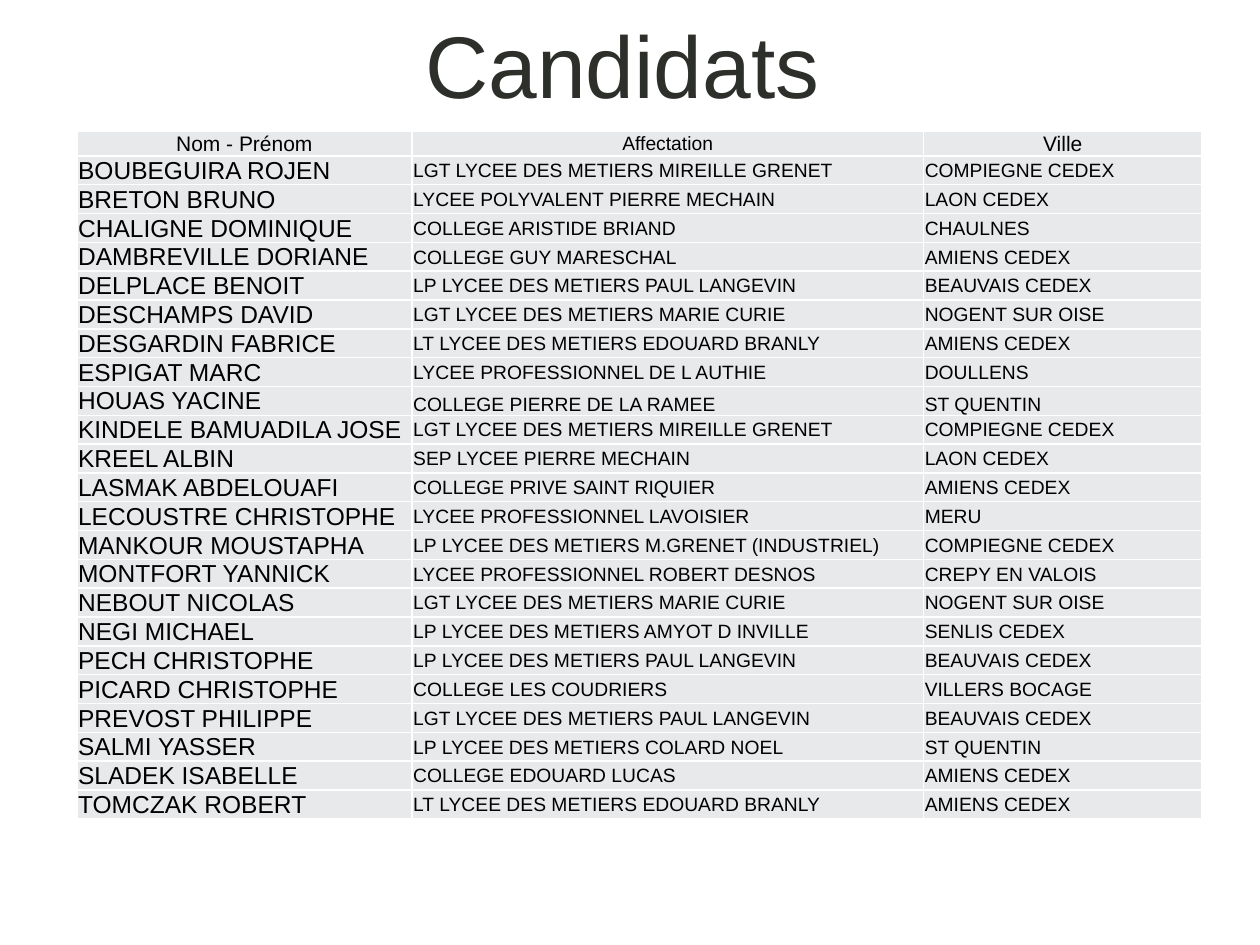
"""Build the "Candidats" slide: a title above a table of names, schools and towns."""
from lxml.etree import SubElement
from pptx import Presentation
from pptx.dml.color import RGBColor
from pptx.enum.text import MSO_ANCHOR as Anchor, PP_ALIGN as Align
from pptx.oxml.ns import qn
from pptx.util import Inches, Pt

HEADINGS = ("Nom - Prénom", "Affectation", "Ville")
CANDIDATES = [
    ("BOUBEGUIRA ROJEN", "LGT LYCEE DES METIERS MIREILLE GRENET", "COMPIEGNE CEDEX"),
    ("BRETON BRUNO", "LYCEE POLYVALENT PIERRE MECHAIN", "LAON CEDEX"),
    ("CHALIGNE DOMINIQUE", "COLLEGE ARISTIDE BRIAND", "CHAULNES"),
    ("DAMBREVILLE DORIANE", "COLLEGE GUY MARESCHAL", "AMIENS CEDEX"),
    ("DELPLACE BENOIT", "LP LYCEE DES METIERS PAUL LANGEVIN", "BEAUVAIS CEDEX"),
    ("DESCHAMPS DAVID", "LGT LYCEE DES METIERS MARIE CURIE", "NOGENT SUR OISE"),
    ("DESGARDIN FABRICE", "LT LYCEE DES METIERS EDOUARD BRANLY", "AMIENS CEDEX"),
    ("ESPIGAT MARC", "LYCEE PROFESSIONNEL DE L AUTHIE", "DOULLENS"),
    ("HOUAS YACINE", "COLLEGE PIERRE DE LA RAMEE", "ST QUENTIN"),
    ("KINDELE BAMUADILA JOSE", "LGT LYCEE DES METIERS MIREILLE GRENET", "COMPIEGNE CEDEX"),
    ("KREEL ALBIN", "SEP LYCEE PIERRE MECHAIN", "LAON CEDEX"),
    ("LASMAK ABDELOUAFI", "COLLEGE PRIVE SAINT RIQUIER", "AMIENS CEDEX"),
    ("LECOUSTRE CHRISTOPHE", "LYCEE PROFESSIONNEL LAVOISIER", "MERU"),
    ("MANKOUR MOUSTAPHA", "LP LYCEE DES METIERS M.GRENET (INDUSTRIEL)", "COMPIEGNE CEDEX"),
    ("MONTFORT YANNICK", "LYCEE PROFESSIONNEL ROBERT DESNOS", "CREPY EN VALOIS"),
    ("NEBOUT NICOLAS", "LGT LYCEE DES METIERS MARIE CURIE", "NOGENT SUR OISE"),
    ("NEGI MICHAEL", "LP LYCEE DES METIERS AMYOT D INVILLE", "SENLIS CEDEX"),
    ("PECH CHRISTOPHE", "LP LYCEE DES METIERS PAUL LANGEVIN", "BEAUVAIS CEDEX"),
    ("PICARD CHRISTOPHE", "COLLEGE LES COUDRIERS", "VILLERS BOCAGE"),
    ("PREVOST PHILIPPE", "LGT LYCEE DES METIERS PAUL LANGEVIN", "BEAUVAIS CEDEX"),
    ("SALMI YASSER", "LP LYCEE DES METIERS COLARD NOEL", "ST QUENTIN"),
    ("SLADEK ISABELLE", "COLLEGE EDOUARD LUCAS", "AMIENS CEDEX"),
    ("TOMCZAK ROBERT", "LT LYCEE DES METIERS EDOUARD BRANLY", "AMIENS CEDEX"),
]
COLUMN_WIDTHS = (2.66, 4.06, 2.21)
HEADING_SIZES = (12, 11, 12)
CANDIDATE_SIZES = (14, 11, 11)


def style_font(font, size, color):
    font.name, font.size, font.bold = "Arial", Pt(size), False
    font.color.rgb = RGBColor.from_string(color)


def add_borders(cell, color, width):
    for side in ("lnL", "lnR", "lnT", "lnB"):
        line = SubElement(cell._tc.get_or_add_tcPr(), qn(f"a:{side}"), w=str(Pt(width)))
        SubElement(SubElement(line, qn("a:solidFill")), qn("a:srgbClr"), val=color)


prs = Presentation()
prs.slide_width, prs.slide_height = Inches(10), Inches(7.5)
slide = prs.slides.add_slide(prs.slide_layouts[5])

heading = slide.shapes.title
heading.left, heading.top = Inches(0.75), Inches(0.07)
heading.width, heading.height = Inches(8.38), Inches(0.87)
heading.text_frame.text = "Candidats"
heading.text_frame.vertical_anchor = Anchor.MIDDLE
heading.text_frame.paragraphs[0].alignment = Align.CENTER
style_font(heading.text_frame.paragraphs[0].font, 50, "2D2F2B")

rows = [HEADINGS, *CANDIDATES]
roster_frame = slide.shapes.add_table(
    len(rows), len(HEADINGS), Inches(0.61), Inches(1.04), Inches(8.92), Inches(5.77))
roster = roster_frame.table
roster.horz_banding = False
for column, width in zip(roster.columns, COLUMN_WIDTHS):
    column.width = Inches(width)

for r, entry in enumerate(rows):
    roster.rows[r].height = Inches(0.17)
    sizes = CANDIDATE_SIZES if r else HEADING_SIZES
    for c, (words, size) in enumerate(zip(entry, sizes)):
        cell = roster.cell(r, c)
        cell.text = words
        cell.margin_left = cell.margin_right = cell.margin_top = Inches(0.01)
        cell.margin_bottom = 0
        lowered = entry[0] == "HOUAS YACINE" and c > 0
        cell.vertical_anchor = Anchor.BOTTOM if lowered else Anchor.MIDDLE
        add_borders(cell, "FFFFFF", 1)
        cell.fill.solid()
        cell.fill.fore_color.rgb = RGBColor.from_string("E8E9EB")
        paragraph = cell.text_frame.paragraphs[0]
        paragraph.alignment = Align.LEFT if r else Align.CENTER
        style_font(paragraph.font, size, "000000")
roster_frame.height = Inches(5.77)

prs.save("out.pptx")
